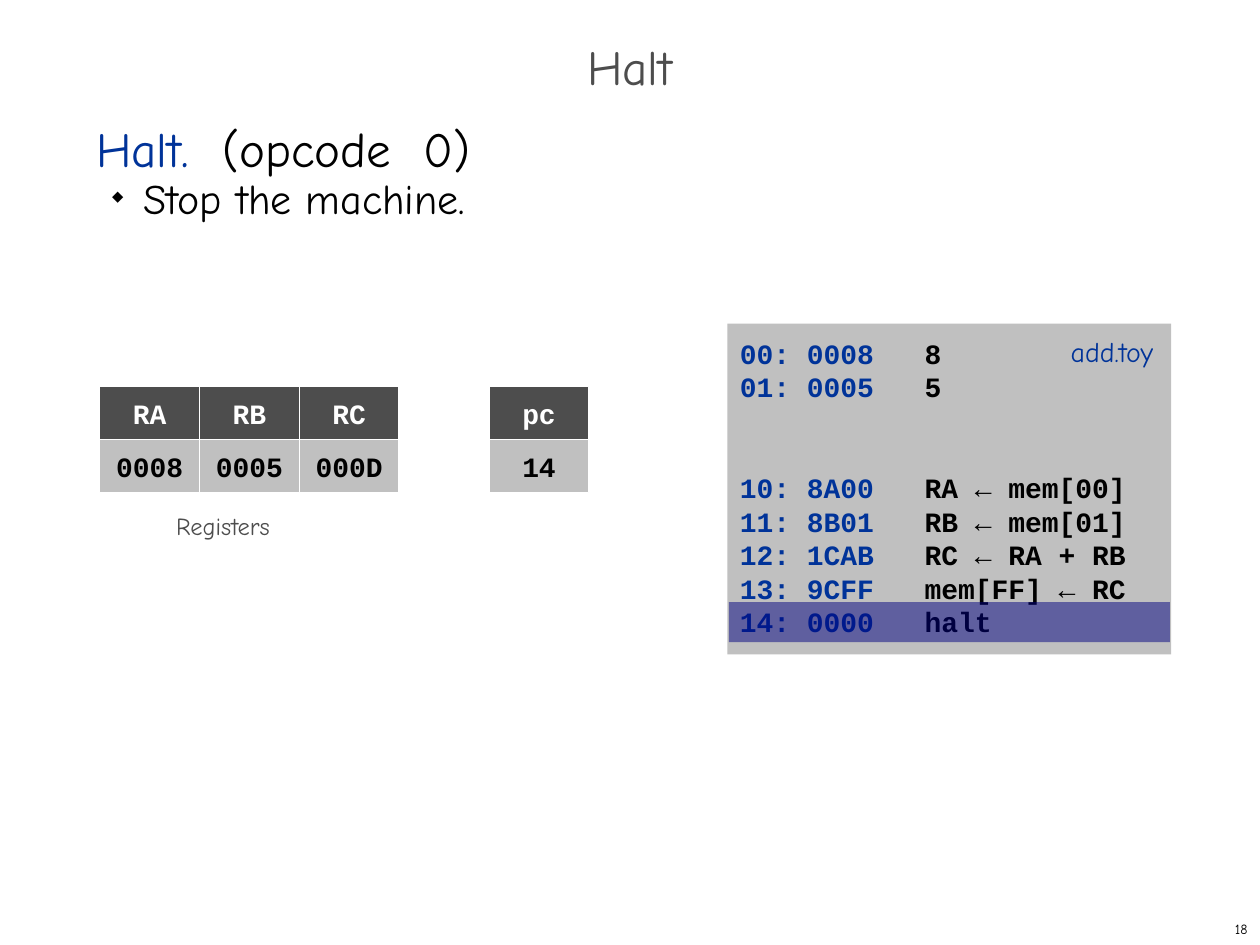
"""Build the slide on the halt instruction of the TOY machine."""
from typing import NamedTuple, Optional

from lxml.etree import SubElement
from pptx import Presentation
from pptx.dml.color import RGBColor
from pptx.enum.shapes import MSO_SHAPE as Preset
from pptx.enum.text import MSO_ANCHOR as Anchor, MSO_AUTO_SIZE as AutoSize, PP_ALIGN as Align
from pptx.oxml.ns import qn
from pptx.util import Pt

BLACK = RGBColor(0x00, 0x00, 0x00)
WHITE = RGBColor(0xFF, 0xFF, 0xFF)
BLUE = RGBColor(0x00, 0x33, 0x99)
NAVY = RGBColor(0x00, 0x00, 0x80)
DARK = RGBColor(0x4D, 0x4D, 0x4D)
SILVER = RGBColor(0xC0, 0xC0, 0xC0)
HAND = "Comic Neue"
CODE = "Courier New"
CELL_WIDTH, CELL_HEIGHT, CELL_TOP = 57, 30.2, 221
CODE_TAB = 105.6
DATA_GAP = 38.4


class Box(NamedTuple):
    left: float
    top: float
    width: float
    height: float


class Register(NamedTuple):
    name: str
    value: str
    left: float


class Instruction(NamedTuple):
    word: str
    meaning: str
    gap: float = 0


REGISTERS = [
    Register("RA", "0008", 57),
    Register("RB", "0005", 57 + CELL_WIDTH),
    Register("RC", "000D", 57 + 2 * CELL_WIDTH),
    Register("pc", "14", 279.5),
]
PROGRAM = [
    Instruction("00: 0008", "8"),
    Instruction("01: 0005", "5"),
    Instruction("10: 8A00", "RA ← mem[00]", DATA_GAP),
    Instruction("11: 8B01", "RB ← mem[01]"),
    Instruction("12: 1CAB", "RC ← RA + RB"),
    Instruction("13: 9CFF", "mem[FF] ← RC"),
    Instruction("14: 0000", "halt"),
]


def write(paragraph, text: str, *, size: float, color: RGBColor = BLACK,
          font: str = HAND, bold: bool = False, align: Align = Align.LEFT) -> None:
    paragraph.alignment = align
    run = paragraph.add_run()
    run.text = text
    run.font.name = font
    run.font.size = Pt(size)
    run.font.bold = bold
    run.font.color.rgb = color


def set_tabs(paragraph, *stops: float) -> None:
    tabs = SubElement(paragraph._p.get_or_add_pPr(), qn("a:tabLst"))
    for stop in stops:
        SubElement(tabs, qn("a:tab"), pos=str(Pt(stop)), algn="l")


def set_bullet(paragraph) -> None:
    properties = paragraph._p.get_or_add_pPr()
    properties.set("marL", str(Pt(27)))
    properties.set("indent", str(Pt(-18)))
    bullet_color = SubElement(properties, qn("a:buClr"))
    SubElement(bullet_color, qn("a:srgbClr"), val=str(BLACK))
    SubElement(properties, qn("a:buSzPct"), val="35000")
    SubElement(properties, qn("a:buChar"), char="◆")


def add_text(slide, box: Box, anchor: Anchor = Anchor.TOP, inset: Optional[float] = None):
    frame = slide.shapes.add_textbox(*map(Pt, box)).text_frame
    frame.word_wrap = True
    frame.vertical_anchor = anchor
    if inset is not None:
        frame.margin_left = frame.margin_right = Pt(inset)
        frame.margin_top = frame.margin_bottom = Pt(inset)
    return frame


def add_block(slide, box: Box, fill: RGBColor, line: Optional[RGBColor] = None):
    block = slide.shapes.add_shape(Preset.RECTANGLE, *map(Pt, box))
    block.shadow.inherit = False
    block.fill.solid()
    block.fill.fore_color.rgb = fill
    if line is None:
        block.line.fill.background()
    else:
        block.line.color.rgb = line
        block.line.width = Pt(0.75)
    return block


def add_title(slide, text: str) -> None:
    title = slide.shapes.title
    title.left, title.top, title.width, title.height = Pt(0), Pt(24), Pt(720), Pt(36)
    frame = title.text_frame
    frame.auto_size = AutoSize.NONE
    frame.vertical_anchor = Anchor.MIDDLE
    heading = frame.paragraphs[0]
    heading.line_spacing = 0.7
    write(heading, text, size=28, color=DARK, align=Align.CENTER)


def add_summary(slide) -> None:
    frame = add_text(slide, Box(48, 72, 618, 426))
    opcode, effect = frame.paragraphs[0], frame.add_paragraph()
    opcode.line_spacing = effect.line_spacing = Pt(26)
    set_tabs(opcode, 72, 187)
    write(opcode, "Halt.\t", size=28, color=BLUE)
    write(opcode, "(opcode\t0)", size=28)
    set_bullet(effect)
    write(effect, "Stop the machine.", size=24)


def add_program(slide, program: list[Instruction]) -> None:
    frame = add_block(slide, Box(415.7, 185, 253.5, 189), SILVER).text_frame
    frame.word_wrap = True
    frame.vertical_anchor = Anchor.TOP
    frame.margin_top = frame.margin_bottom = Pt(7.2)
    for index, instruction in enumerate(program):
        row = frame.add_paragraph() if index else frame.paragraphs[0]
        row.space_before = Pt(instruction.gap)
        set_tabs(row, CODE_TAB)
        write(row, instruction.word + "\t", size=16, color=BLUE, font=CODE, bold=True)
        write(row, instruction.meaning, size=16, font=CODE, bold=True)
    file_name = add_text(slide, Box(559.5, 191, 99.5, 19.5), inset=0)
    write(file_name.paragraphs[0], "add.toy", size=16, color=BLUE, align=Align.RIGHT)
    current_step = add_block(slide, Box(416.5, 344, 252, 23), NAVY)
    tint = current_step.fill._xPr.find(qn("a:solidFill"))[0]
    SubElement(tint, qn("a:alpha"), val="50000")


def add_register(slide, register: Register) -> None:
    cells = [(register.name, DARK, WHITE), (register.value, SILVER, BLACK)]
    for row, (text, fill, color) in enumerate(cells):
        box = Box(register.left, CELL_TOP + row * CELL_HEIGHT, CELL_WIDTH, CELL_HEIGHT)
        frame = add_block(slide, box, fill, WHITE).text_frame
        frame.word_wrap = True
        frame.vertical_anchor = Anchor.MIDDLE
        write(frame.paragraphs[0], text, size=16, color=color, font=CODE, bold=True,
              align=Align.CENTER)


def main() -> None:
    deck = Presentation()
    deck.slide_width, deck.slide_height = Pt(720), Pt(540)
    slide = deck.slides.add_slide(deck.slide_layouts[5])
    add_title(slide, "Halt")
    add_summary(slide)
    add_program(slide, PROGRAM)
    for register in REGISTERS:
        add_register(slide, register)
    caption = add_text(slide, Box(93.5, 288.5, 110, 24))
    write(caption.paragraphs[0], "Registers", size=14, color=DARK)
    page = add_text(slide, Box(570, 522, 150, 18), Anchor.MIDDLE)
    write(page.paragraphs[0], "18", size=8, align=Align.RIGHT)
    deck.save("out.pptx")


if __name__ == "__main__":
    main()
